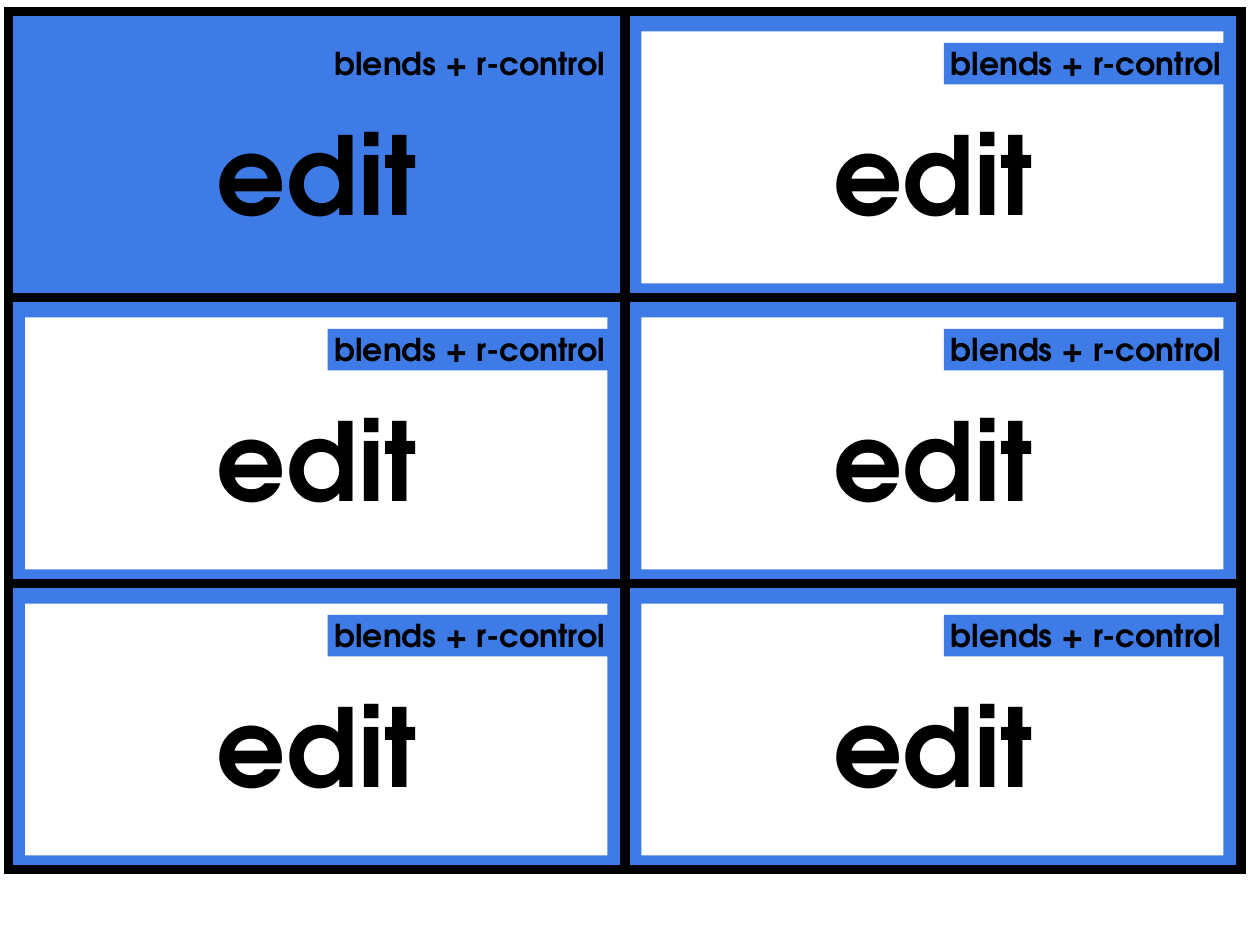
from itertools import product

from lxml import etree
from pptx import Presentation
from pptx.dml.color import RGBColor
from pptx.enum.shapes import MSO_SHAPE
from pptx.enum.text import MSO_AUTO_SIZE, PP_ALIGN
from pptx.oxml.ns import qn
from pptx.util import Inches, Pt

RECTANGLE = MSO_SHAPE.RECTANGLE
CENTER = PP_ALIGN.CENTER
FIT_SHAPE = MSO_AUTO_SIZE.SHAPE_TO_FIT_TEXT

COLORS = {"blue": "3F7BE7", "white": "FFFFFF", "black": "000000"}
FONT = "TeX Gyre Adventor"
BORDER_WIDTH = Pt(6)

COLUMNS, ROWS = 2, 3
GRID_LEFT, GRID_TOP = 0.07, 0.09
CARD_WIDTH, CARD_HEIGHT = 4.89, 2.27


def color(name):
    return RGBColor.from_string(COLORS[name])


def write_text(frame, text, size, bold=True, ink="black", align=CENTER):
    paragraph = frame.paragraphs[0]
    paragraph.alignment = align
    run = paragraph.add_run()
    run.text = text
    run.font.name = FONT
    run.font.size = Pt(size)
    run.font.bold = bold
    run.font.color.rgb = color(ink)


class LabelSheet:
    def __init__(self, slide):
        self.slide = slide

    def frame(self, left, top, width, height):
        """Add a one-cell table with a thick black border."""
        table = self.slide.shapes.add_table(
            1, 1, Inches(left), Inches(top), Inches(width), Inches(height)
        ).table
        cell = table.cell(0, 0)
        cell_properties = cell._tc.get_or_add_tcPr()
        for side in ("a:lnL", "a:lnR", "a:lnT", "a:lnB"):
            line = etree.SubElement(cell_properties, qn(side), w=str(BORDER_WIDTH))
            fill = etree.SubElement(line, qn("a:solidFill"))
            etree.SubElement(fill, qn("a:srgbClr"), val=COLORS["black"])
        cell.fill.solid()
        cell.fill.fore_color.rgb = color("blue")

    def block(self, left, top, width, height, fill):
        rectangle = self.slide.shapes.add_shape(
            RECTANGLE, Inches(left), Inches(top), Inches(width), Inches(height)
        )
        rectangle.shadow.inherit = False
        rectangle.fill.solid()
        rectangle.fill.fore_color.rgb = color(fill)
        rectangle.line.fill.background()

    def text(self, left, top, width, height, words, size):
        box = self.slide.shapes.add_textbox(
            Inches(left), Inches(top), Inches(width), Inches(height)
        )
        box.text_frame.word_wrap = True
        box.text_frame.auto_size = FIT_SHAPE
        write_text(box.text_frame, words, size)

    def card(self, left, top, has_panel):
        self.frame(left, top, CARD_WIDTH, CARD_HEIGHT)
        if has_panel:
            self.block(left + 0.13, top + 0.16, 4.62, 2, "white")
        self.text(left + 0.04, top + 0.71, 4.81, 1.14, "edit", 62)
        self.block(left + 2.53, top + 0.25, 2.28, 0.33, "blue")
        self.text(left + 2.39, top + 0.21, 2.54, 0.4, "blends + r-control", 18)


def main():
    presentation = Presentation()
    presentation.slide_width = Inches(10)
    presentation.slide_height = Inches(7.5)
    blank_layout = presentation.slide_layouts[6]
    sheet = LabelSheet(presentation.slides.add_slide(blank_layout))

    for row, column in product(range(ROWS), range(COLUMNS)):
        sheet.card(
            GRID_LEFT + column * CARD_WIDTH,
            GRID_TOP + row * CARD_HEIGHT,
            has_panel=(row, column) != (0, 0),
        )

    presentation.save("out.pptx")


if __name__ == "__main__":
    main()
